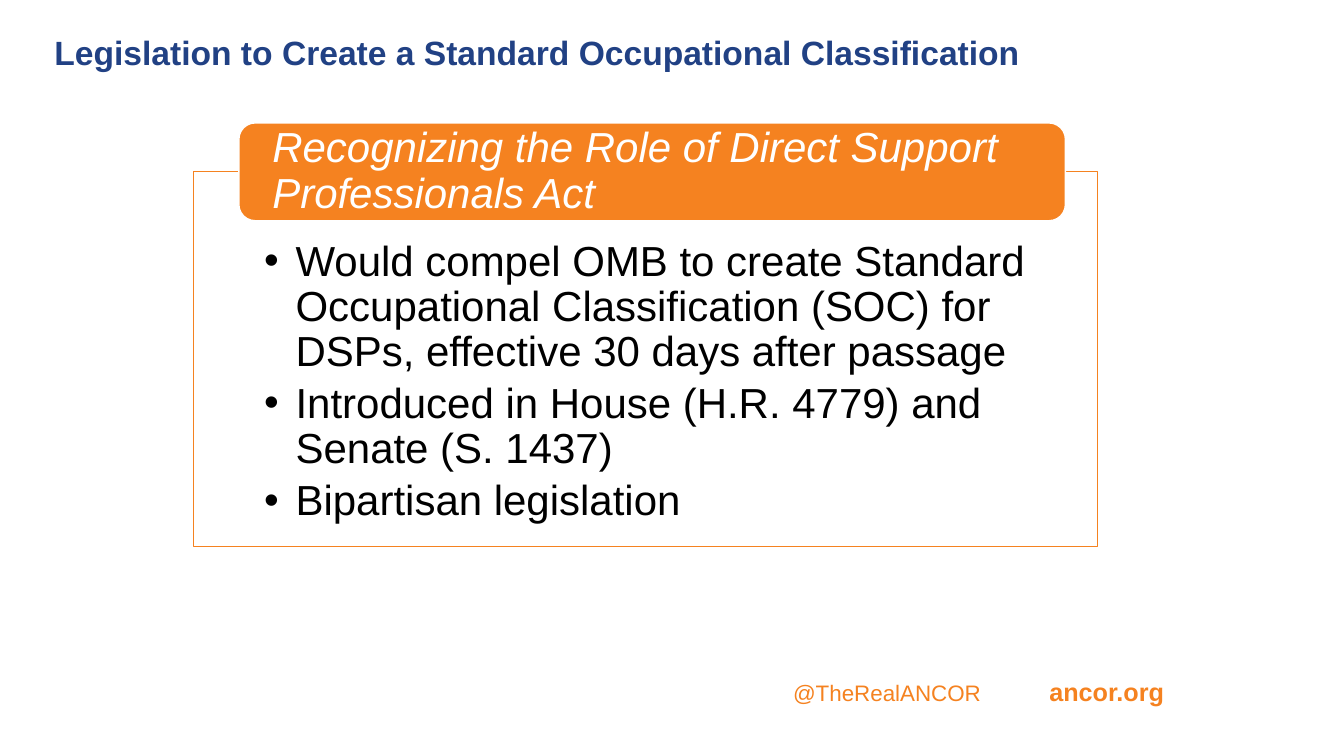
import pptx
import pptx.util
import pptx.dml.color
import pptx.enum.shapes
import pptx.enum.text
from lxml import etree

Pt = pptx.util.Pt
RGBColor = pptx.dml.color.RGBColor
PP_ALIGN = pptx.enum.text.PP_ALIGN
MSO_ANCHOR = pptx.enum.text.MSO_ANCHOR

TITLE = "Legislation to Create a Standard Occupational Classification"
ACT = "Recognizing the Role of Direct Support Professionals Act"
PROVISIONS = [
    "Would compel OMB to create Standard Occupational Classification (SOC) for "
    "DSPs, effective 30 days after passage",
    "Introduced in House (H.R. 4779) and Senate (S. 1437)",
    "Bipartisan legislation",
]
HANDLE, SITE = "@TheRealANCOR", "ancor.org"

NAVY = RGBColor(0x21, 0x41, 0x84)
ORANGE = RGBColor(0xF5, 0x82, 0x20)
WHITE = RGBColor(0xFF, 0xFF, 0xFF)
BLACK = RGBColor(0x00, 0x00, 0x00)

# Left, top, width, height in points
TITLE_BOX = (31.68, 22.32, 896.4, 61.92)
PROVISIONS_BOX = (138.24, 122.4, 645.84, 267.84)
ACT_BOX = (170.64, 87.84, 590.4, 69.84)
CONTACT_BOX = (559.44, 479.52, 401.04, 28.8)
BULLET_INDENT = 22.5
SITE_TAB = 183


def place(shape, box):
    shape.left, shape.top, shape.width, shape.height = map(Pt, box)


def set_frame(shape, anchor, left=7.2, top=3.6, right=7.2, bottom=3.6):
    frame = shape.text_frame
    frame.word_wrap = True
    frame.auto_size = pptx.enum.text.MSO_AUTO_SIZE.NONE
    frame.vertical_anchor = anchor
    frame.margin_left, frame.margin_top = Pt(left), Pt(top)
    frame.margin_right, frame.margin_bottom = Pt(right), Pt(bottom)
    return frame


def paint(shape, fill, line):
    shape.fill.solid()
    shape.fill.fore_color.rgb = fill
    shape.line.color.rgb = line
    shape.line.width = Pt(1)


def format_run(run, size, color, bold=False, italic=False):
    run.font.name = "Arial"
    run.font.size = Pt(size)
    run.font.color.rgb = color
    run.font.bold = bold
    run.font.italic = italic


def format_paragraph(paragraph, size, color, after=0, **style):
    paragraph.alignment = PP_ALIGN.LEFT
    paragraph.line_spacing = 0.9
    paragraph.space_before = Pt(0)
    paragraph.space_after = Pt(after)
    for run in paragraph.runs:
        format_run(run, size, color, **style)


def add_child(parent, tag, **attributes):
    child = etree.SubElement(parent, pptx.oxml.ns.qn(tag))
    for key, value in attributes.items():
        child.set(key, str(value))
    return child


def build_title(slide):
    title = slide.shapes.title
    place(title, TITLE_BOX)
    frame = set_frame(title, MSO_ANCHOR.TOP)
    frame.text = TITLE
    format_paragraph(frame.paragraphs[0], 24, NAVY, bold=True)


def build_provisions(slide):
    provisions = slide.placeholders[1]
    place(provisions, PROVISIONS_BOX)
    paint(provisions, WHITE, ORANGE)
    fill_color = provisions.fill._xPr.find(".//" + pptx.oxml.ns.qn("a:srgbClr"))
    add_child(fill_color, "a:alpha", val=90000)
    frame = set_frame(provisions, MSO_ANCHOR.TOP, 50.4, 48.96, 50.4, 16.56)
    frame.text = "\n".join(PROVISIONS)
    for paragraph in frame.paragraphs:
        properties = paragraph._p.get_or_add_pPr()
        properties.set("marL", str(Pt(BULLET_INDENT)))
        properties.set("indent", str(-Pt(BULLET_INDENT)))
        add_child(properties, "a:buFont", typeface="Arial")
        add_child(properties, "a:buChar", char="•")
        format_paragraph(paragraph, 30, BLACK, after=4.5)


def build_act(slide):
    act = slide.shapes.add_shape(
        pptx.enum.shapes.MSO_SHAPE.ROUNDED_RECTANGLE, *map(Pt, ACT_BOX))
    act.shadow.inherit = False
    paint(act, ORANGE, WHITE)
    frame = set_frame(act, MSO_ANCHOR.MIDDLE, 20.5, 0, 20.5, 0)
    frame.text = ACT
    format_paragraph(frame.paragraphs[0], 30, WHITE, italic=True)


def build_contact(slide):
    contact = slide.shapes.add_textbox(*map(Pt, CONTACT_BOX))
    line = set_frame(contact, MSO_ANCHOR.TOP).paragraphs[0]
    tabs = add_child(line._p.get_or_add_pPr(), "a:tabLst")
    add_child(tabs, "a:tab", pos=Pt(SITE_TAB), algn="l")
    for text, size, bold in ((HANDLE + "\t", 16, False), (SITE, 18, True)):
        run = line.add_run()
        run.text = text
        format_run(run, size, ORANGE, bold=bold)


def main():
    deck = pptx.Presentation()
    deck.slide_width, deck.slide_height = Pt(960), Pt(540)
    slide = deck.slides.add_slide(deck.slide_layouts[1])
    build_title(slide)
    build_provisions(slide)
    build_act(slide)
    build_contact(slide)
    deck.save("out.pptx")


if __name__ == "__main__":
    main()
